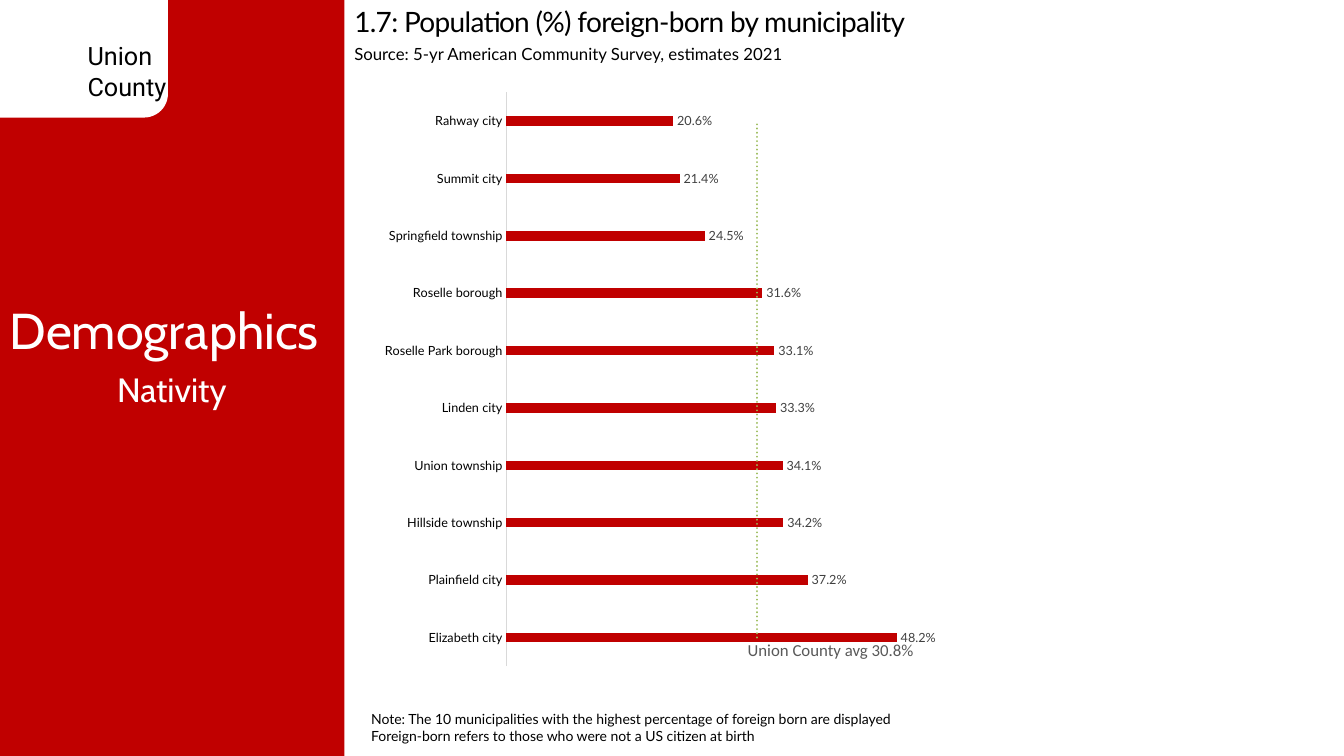
"""Build the Union County slide on foreign-born population by municipality."""
from dataclasses import dataclass

from lxml.etree import SubElement
from pptx import Presentation
from pptx.chart.data import CategoryChartData
from pptx.dml.color import RGBColor
from pptx.enum.chart import XL_CHART_TYPE, XL_LABEL_POSITION, XL_TICK_MARK
from pptx.enum.shapes import MSO_SHAPE
from pptx.enum.text import PP_ALIGN
from pptx.oxml import parse_xml
from pptx.oxml.ns import nsdecls, qn
from pptx.util import Pt


@dataclass(frozen=True)
class Theme:
    red: str = "C00000"
    white: str = "FFFFFF"
    black: str = "000000"
    label_gray: str = "404040"
    average_gray: str = "595959"
    axis_gray: str = "D9D9D9"
    average_green: str = "9BBB59"
    section_size: int = 36
    topic_size: int = 24
    title_size: int = 20
    county_size: int = 18
    source_size: int = 12
    note_size: int = 10
    chart_size: int = 9


theme = Theme()


def set_font(font, name, size, color):
    font.name = name
    font.size = Pt(size)
    font.color.rgb = RGBColor.from_string(color)


def add_text(box, text, name, size, color, alignment=PP_ALIGN.LEFT):
    text_box = slide.shapes.add_textbox(*map(Pt, box))
    text_frame = text_box.text_frame
    text_frame.word_wrap = True
    text_frame.text = text
    for paragraph in text_frame.paragraphs:
        paragraph.alignment = alignment
        for run in paragraph.runs:
            set_font(run.font, name, size, color)
    return text_box


presentation = Presentation()
presentation.slide_width = Pt(960)
presentation.slide_height = Pt(540)
slide = presentation.slides.add_slide(presentation.slide_layouts[6])

panels = [
    (MSO_SHAPE.RECTANGLE, (0, 0, 246, 540), theme.red),
    (MSO_SHAPE.ROUNDED_RECTANGLE, (-24, -18, 144, 102), theme.white),
]
for preset, box, color in panels:
    panel = slide.shapes.add_shape(preset, *map(Pt, box))
    panel.shadow.inherit = False
    panel.fill.solid()
    panel.fill.fore_color.rgb = RGBColor.from_string(color)
    panel.line.fill.background()

add_text((55.5, 25.5, 72, 51), "Union\nCounty", "Roboto", theme.county_size, theme.black)
add_text((0, 210, 246, 51), "Demographics", "Cabin", theme.section_size, theme.white)
title = add_text((246, 0, 648, 31.5), "1.7: Population (%) foreign-born by municipality",
                 "Lato", theme.title_size, theme.black)
title.text_frame.paragraphs[0].runs[0].font._element.set("spc", "-50")
add_text((246, 28, 508, 22), "Source: 5-yr American Community Survey, estimates 2021",
         "Lato", theme.source_size, theme.black)
add_text((258, 504, 702, 32),
         "Note: The 10 municipalities with the highest percentage of foreign born are displayed\n"
         "Foreign-born refers to those who were not a US citizen at birth",
         "Lato", theme.note_size, theme.black)
add_text((24.5, 260.2, 196.5, 36), "Nativity", "Cabin", theme.topic_size, theme.white,
         PP_ALIGN.CENTER)

foreign_born = {
    "Elizabeth city": 0.482,
    "Plainfield city": 0.372,
    "Hillside township": 0.342,
    "Union township": 0.341,
    "Linden city": 0.333,
    "Roselle Park borough": 0.331,
    "Roselle borough": 0.316,
    "Springfield township": 0.245,
    "Summit city": 0.214,
    "Rahway city": 0.206,
}
county_average = 0.31
chart_data = CategoryChartData(number_format="0.0%")
chart_data.categories = list(foreign_born)
chart_data.add_series("% Foreign Born", list(foreign_born.values()))
chart_data.add_series("Series 2", [county_average] * len(foreign_born))
chart = slide.shapes.add_chart(XL_CHART_TYPE.BAR_CLUSTERED, Pt(262), Pt(57.5), Pt(643), Pt(427),
                               chart_data).chart
set_font(chart.font, "Calibri", theme.note_size, theme.black)
chart.has_legend = False
chart.has_title = False

category_axis = chart.category_axis
category_axis.major_tick_mark = XL_TICK_MARK.NONE
category_axis.has_major_gridlines = False
category_axis.format.line.color.rgb = RGBColor.from_string(theme.axis_gray)
category_axis.format.line.width = Pt(0.75)
set_font(category_axis.tick_labels.font, "Lato", theme.chart_size, theme.black)
value_axis = chart.value_axis
value_axis.minimum_scale = 0
value_axis.maximum_scale = 0.6
value_axis.has_major_gridlines = False
value_axis.visible = False

plot = chart.plots[0]
plot.gap_width = 500
plot.overlap = 100
plot.vary_by_categories = False
bars, average = plot.series
bars.format.fill.solid()
bars.format.fill.fore_color.rgb = RGBColor.from_string(theme.red)
average.format.fill.background()
average.format.line.fill.background()
labels = bars.data_labels
labels.show_value = True
labels.position = XL_LABEL_POSITION.OUTSIDE_END
labels.number_format = "0.0%"
labels.number_format_is_linked = False
set_font(labels.font, "Lato", theme.chart_size, theme.label_gray)

trend_line = parse_xml(
    f'<c:trendline {nsdecls("c", "a")}><c:name>Union County avg 30.8%</c:name>'
    f'<c:spPr><a:ln w="{Pt(1.5)}" cap="rnd"><a:solidFill><a:srgbClr val="{theme.average_green}"/>'
    '</a:solidFill><a:prstDash val="sysDot"/></a:ln></c:spPr>'
    '<c:trendlineType val="linear"/><c:dispRSqr val="0"/><c:dispEq val="0"/></c:trendline>')
average._element.find(qn("c:cat")).addprevious(trend_line)

plot_area = chart._chartSpace.chart.plotArea
for layout in plot_area.findall(qn("c:layout")):
    plot_area.remove(layout)
layout = parse_xml(f'<c:layout {nsdecls("c")}><c:manualLayout/></c:layout>')
plot_area.insert(0, layout)
placement = [("layoutTarget", "inner"), ("xMode", "edge"), ("yMode", "edge"),
             ("x", "0.155"), ("y", "0.02"), ("w", "0.54"), ("h", "0.96")]
for tag, value in placement:
    SubElement(layout[0], qn(f"c:{tag}")).set("val", value)

add_text((527, 453.5, 150, 22), "Union County avg 30.8%", "Calibri", theme.source_size,
         theme.average_gray)

presentation.save("out.pptx")
